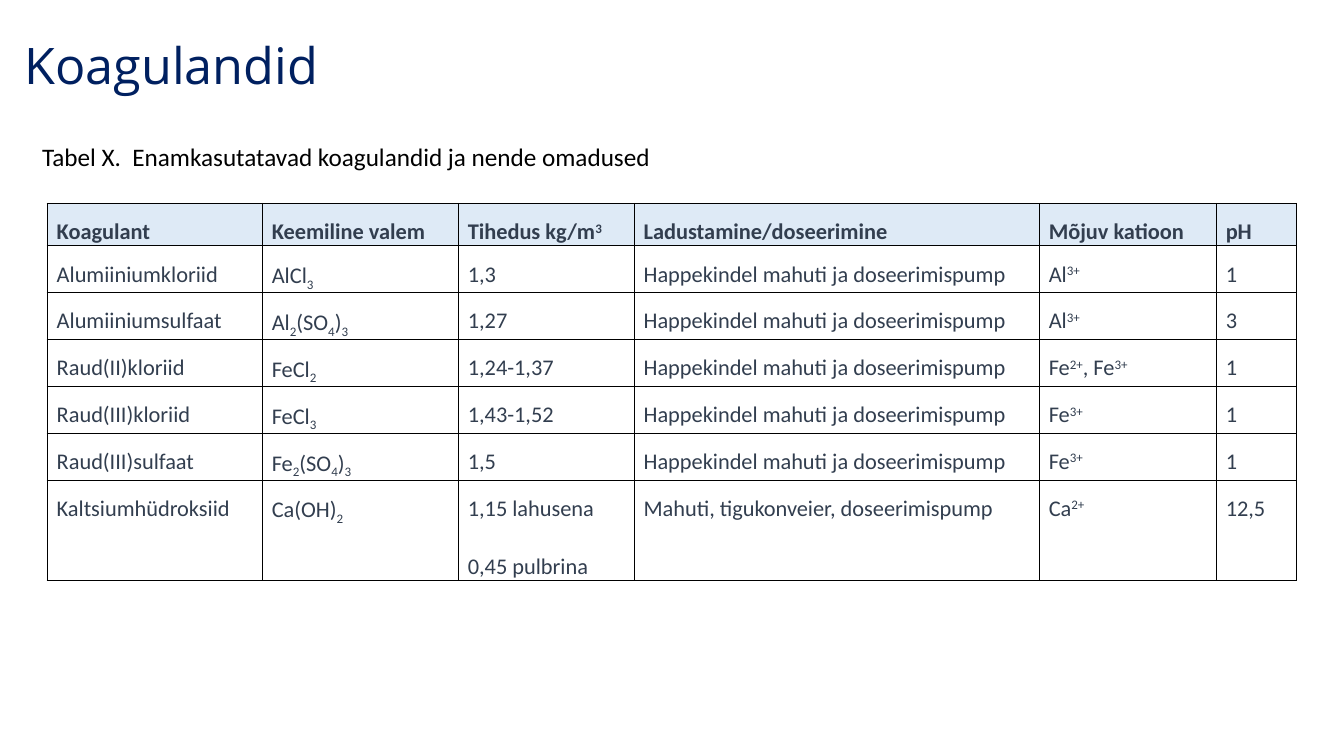
from dataclasses import dataclass
from itertools import groupby

from lxml.etree import SubElement
from pptx import Presentation
from pptx.dml.color import RGBColor as Rgb
from pptx.enum.shapes import MSO_SHAPE as Shape
from pptx.enum.text import MSO_ANCHOR as Anchor, MSO_AUTO_SIZE as AutoSize, PP_ALIGN as Align
from pptx.oxml.ns import qn
from pptx.slide import Slide
from pptx.table import _Cell as Cell
from pptx.text.text import Font, _Paragraph as Paragraph
from pptx.util import Cm, Pt


@dataclass(frozen=True)
class TextStyle:
    face: str
    size: int
    color: str
    bold: bool = False


@dataclass(frozen=True)
class Theme:
    title: TextStyle = TextStyle("Open Sans", 36, "002060")
    caption: TextStyle = TextStyle("Calibri", 18, "000000")
    header: TextStyle = TextStyle("Calibri", 16, "323E4F", True)
    body: TextStyle = TextStyle("Calibri", 16, "323E4F")
    panel: str = "FFFFFF"
    header_fill: str = "DEEAF6"
    border: str = "000000"


@dataclass(frozen=True)
class Coagulant:
    name: str
    formula: str
    density: str
    storage: str
    cation: str
    ph: str

    def values(self) -> list[str]:
        return [self.name, self.formula, self.density, self.storage, self.cation, self.ph]


THEME = Theme()
SCRIPTS = {
    "₂": ("2", -25), "₃": ("3", -25), "₄": ("4", -25),
    "²": ("2", 30), "³": ("3", 30), "⁺": ("+", 30),
}
ACID_STORAGE = "Happekindel mahuti ja doseerimispump"
HEADER = Coagulant("Koagulant", "Keemiline valem", "Tihedus kg/m³",
                   "Ladustamine/doseerimine", "Mõjuv katioon", "pH")
COAGULANTS = [
    Coagulant("Alumiiniumkloriid", "AlCl₃", "1,3", ACID_STORAGE, "Al³⁺", "1"),
    Coagulant("Alumiiniumsulfaat", "Al₂(SO₄)₃", "1,27", ACID_STORAGE, "Al³⁺", "3"),
    Coagulant("Raud(II)kloriid", "FeCl₂", "1,24-1,37", ACID_STORAGE, "Fe²⁺, Fe³⁺", "1"),
    Coagulant("Raud(III)kloriid", "FeCl₃", "1,43-1,52", ACID_STORAGE, "Fe³⁺", "1"),
    Coagulant("Raud(III)sulfaat", "Fe₂(SO₄)₃", "1,5", ACID_STORAGE, "Fe³⁺", "1"),
    Coagulant("Kaltsiumhüdroksiid", "Ca(OH)₂", "1,15 lahusena\n0,45 pulbrina",
              "Mahuti, tigukonveier, doseerimispump", "Ca²⁺", "12,5"),
]
COLUMN_WIDTHS = [5.42, 4.94, 4.43, 10.21, 4.46, 2.02]
ROW_HEIGHT, LAST_ROW_HEIGHT = 1.04, 2.46


def style_font(font: Font, style: TextStyle) -> None:
    font.name = style.face
    font.size = Pt(style.size)
    font.bold = style.bold
    font.color.rgb = Rgb.from_string(style.color)


def write_scripts(para: Paragraph, text: str) -> None:
    pieces = [SCRIPTS.get(letter, (letter, 0)) for letter in text]
    for baseline, group in groupby(pieces, key=lambda piece: piece[1]):
        span = para.add_run()
        span.text = "".join(letter for letter, _ in group)
        if baseline:
            span._r.get_or_add_rPr().set("baseline", str(baseline * 1000))


def add_borders(cell: Cell) -> None:
    properties = cell._tc.get_or_add_tcPr()
    for side in ("lnL", "lnR", "lnT", "lnB"):
        line = SubElement(properties, qn(f"a:{side}"), w=str(Pt(1)))
        fill = SubElement(line, qn("a:solidFill"))
        SubElement(fill, qn("a:srgbClr"), val=THEME.border)


def fill_cell(cell: Cell, text: str, is_header: bool) -> None:
    cell.margin_left = cell.margin_right = Cm(0.24)
    cell.margin_top, cell.margin_bottom = Cm(0.03), 0
    add_borders(cell)
    if is_header:
        cell.fill.solid()
        cell.fill.fore_color.rgb = Rgb.from_string(THEME.header_fill)
    else:
        cell.fill.background()
    frame = cell.text_frame
    for index, line in enumerate(text.split("\n")):
        para = frame.add_paragraph() if index else frame.paragraphs[0]
        para.alignment = Align.JUSTIFY
        para.line_spacing = 1.5
        para.space_after = Pt(12)
        style_font(para.font, THEME.header if is_header else THEME.body)
        write_scripts(para, line)


def add_panel(page: Slide) -> None:
    panel = page.shapes.add_shape(Shape.RECTANGLE, 0, 0, Cm(33.87), Cm(7.06))
    panel.shadow.inherit = False
    panel.fill.solid()
    panel.fill.fore_color.rgb = Rgb.from_string(THEME.panel)
    panel.line.fill.background()
    page.shapes._spTree.insert(2, panel._element)


def add_title(page: Slide) -> None:
    title = page.shapes.title
    title.left, title.top, title.width, title.height = Cm(0.36), Cm(0.86), Cm(27.69), Cm(1.73)
    frame = title.text_frame
    frame.text = "Koagulandid"
    frame.vertical_anchor = Anchor.MIDDLE
    frame.auto_size = AutoSize.NONE
    para = frame.paragraphs[0]
    para.alignment = Align.LEFT
    para.line_spacing = 0.9
    style_font(para.font, THEME.title)


def add_coagulant_table(page: Slide) -> None:
    rows = [HEADER, *COAGULANTS]
    heights = [ROW_HEIGHT] * len(COAGULANTS) + [LAST_ROW_HEIGHT]
    table = page.shapes.add_table(len(rows), len(COLUMN_WIDTHS), Cm(1.19), Cm(5.13),
                                  Cm(sum(COLUMN_WIDTHS)), Cm(sum(heights))).table
    table.horz_banding = False
    table.first_row = False
    for column, width in zip(table.columns, COLUMN_WIDTHS):
        column.width = Cm(width)
    for row, height, coagulant in zip(table.rows, heights, rows):
        row.height = Cm(height)
        for cell, text in zip(row.cells, coagulant.values()):
            fill_cell(cell, text, coagulant is HEADER)


def add_caption(page: Slide) -> None:
    box = page.shapes.add_textbox(Cm(0.81), Cm(3.43), Cm(17.02), Cm(1.02))
    frame = box.text_frame
    frame.word_wrap = True
    frame.auto_size = AutoSize.SHAPE_TO_FIT_TEXT
    frame.text = "Tabel X.  Enamkasutatavad koagulandid ja nende omadused"
    style_font(frame.paragraphs[0].font, THEME.caption)


def main() -> None:
    deck = Presentation()
    deck.slide_width, deck.slide_height = Cm(33.87), Cm(19.05)
    page = deck.slides.add_slide(deck.slide_layouts[5])
    add_panel(page)
    add_title(page)
    add_coagulant_table(page)
    add_caption(page)
    deck.save("out.pptx")


if __name__ == "__main__":
    main()
